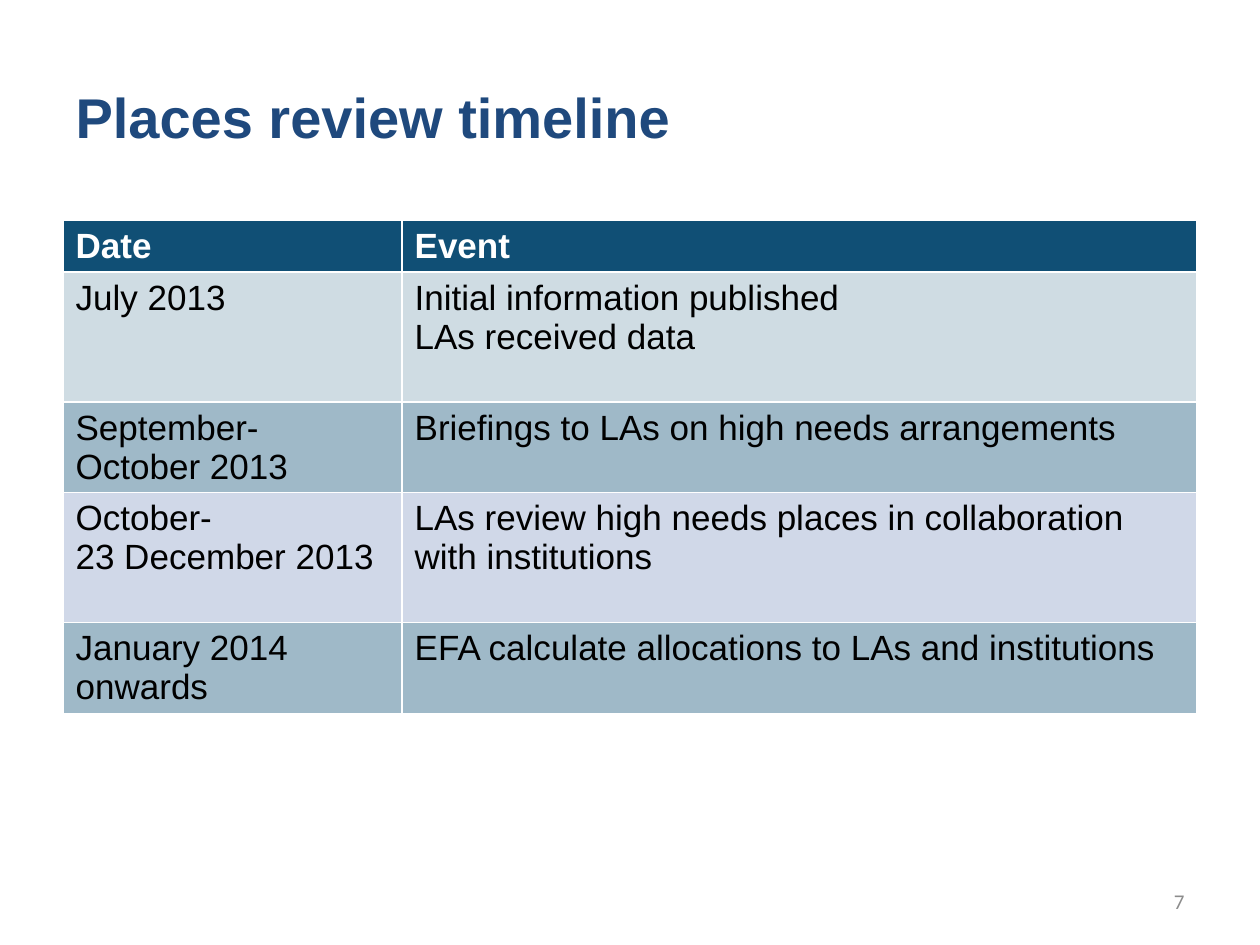
from dataclasses import dataclass

from pptx import Presentation
from pptx.dml.color import RGBColor
from pptx.enum.text import MSO_ANCHOR, PP_ALIGN
from pptx.util import Pt

LEFT, RIGHT = PP_ALIGN.LEFT, PP_ALIGN.RIGHT
MIDDLE = MSO_ANCHOR.MIDDLE
TITLE_ONLY = 5


@dataclass(frozen=True)
class Theme:
    title: str = "1F497D"
    header_fill: str = "104F75"
    header_text: str = "FFFFFF"
    body_text: str = "000000"
    number: str = "8C8C8C"
    row_fills: tuple = ("CFDCE3", "9FB9C8", "D0D8E8", "9FB9C8")
    font: str = "Arial"
    number_font: str = "Calibri"
    title_size: int = 32
    table_size: int = 20
    number_size: int = 12


THEME = Theme()
HEADINGS = ("Date", "Event")
EVENTS = (
    ("July 2013", "Initial information published\nLAs received data"),
    ("September- October 2013", "Briefings to LAs on high needs arrangements"),
    ("October-\n23 December 2013",
     "LAs review high needs places in collaboration with institutions"),
    ("January 2014 onwards", "EFA calculate allocations to LAs and institutions"),
)
HEADER_HEIGHT = 29.5
EVENT_HEIGHTS = (74.2, 51.6, 74.2, 51.6)
DATE_SHARE = 0.299


def write(tf, text, color, size, name=THEME.font, bold=False, align=LEFT):
    """Fill a text frame, one paragraph per line of text."""
    tf.text = text
    for p in tf.paragraphs:
        p.alignment = align
        for key, value in dict(name=name, size=Pt(size), bold=bold).items():
            setattr(p.font, key, value)
            for r in p.runs:
                setattr(r.font, key, value)
        for r in p.runs:
            r.font.color.rgb = RGBColor.from_string(color)


def add_title(s, box, text):
    sp = s.shapes.title
    for key, value in zip(("left", "top", "width", "height"), box):
        setattr(sp, key, Pt(value))
    sp.text_frame.vertical_anchor = MIDDLE
    write(sp.text_frame, text, THEME.title, THEME.title_size, bold=True)


def add_timeline(s, box):
    left, top, width, height = box
    rows = (HEADINGS, *EVENTS)
    table = s.shapes.add_table(len(rows), len(HEADINGS), Pt(left), Pt(top),
                               Pt(width), Pt(height)).table
    date_width = round(width * DATE_SHARE, 2)
    for column, size in zip(table.columns, (date_width, width - date_width)):
        column.width = Pt(size)
    for row, size in zip(table.rows, (HEADER_HEIGHT, *EVENT_HEIGHTS)):
        row.height = Pt(size)

    fills = (THEME.header_fill, *THEME.row_fills)
    for i, (texts, fill) in enumerate(zip(rows, fills)):
        header = i == 0
        color = THEME.header_text if header else THEME.body_text
        for j, text in enumerate(texts):
            cell = table.cell(i, j)
            cell.fill.solid()
            cell.fill.fore_color.rgb = RGBColor.from_string(fill)
            write(cell.text_frame, text, color, THEME.table_size, bold=header)


def add_slide_number(s, box, number):
    tf = s.shapes.add_textbox(*map(Pt, box)).text_frame
    tf.word_wrap = True
    tf.vertical_anchor = MIDDLE
    write(tf, str(number), THEME.number, THEME.number_size,
          name=THEME.number_font, align=RIGHT)


def main():
    prs = Presentation()
    prs.slide_width, prs.slide_height = Pt(720), Pt(540)
    s = prs.slides.add_slide(prs.slide_layouts[TITLE_ONLY])
    margin, width = 36, 648
    add_title(s, (margin, 21.6, width, 90), "Places review timeline")
    add_timeline(s, (margin, 126, width, HEADER_HEIGHT + sum(EVENT_HEIGHTS)))
    add_slide_number(s, (516, 500.5, 168, 28.8), 7)
    prs.save("out.pptx")


if __name__ == "__main__":
    main()
